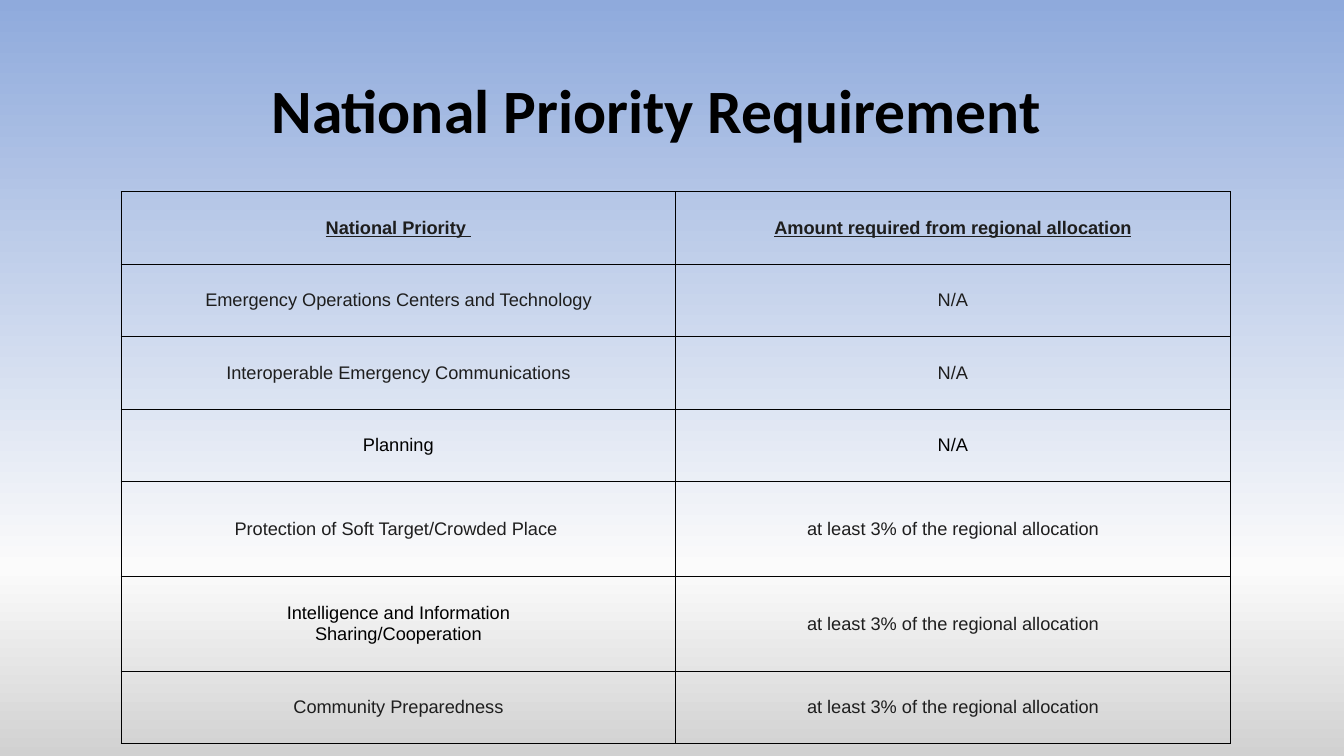
from copy import deepcopy

from lxml import etree
from pptx import Presentation
from pptx.dml.color import RGBColor
from pptx.enum import text
from pptx.oxml import ns
from pptx.util import Inches, Pt

TITLE = "National Priority Requirement"
BLACK, CHARCOAL = "000000", "1E1E1E"
SHARE = "at least 3% of the regional allocation"
BACKGROUND_STOPS = [(0, "8FAADC"), (0.75, "FBFBFB"), (1, "D1D1D1")]
SHORT_ROW, TALL_ROW = 0.72, 0.94
COLUMN_WIDTH = 5.5

# Row height, then (text, colour) for each column; \v is a line break
ROWS = [
    (SHORT_ROW, ("National Priority ", CHARCOAL),
     ("Amount required from regional allocation", CHARCOAL)),
    (SHORT_ROW, ("Emergency Operations Centers and Technology", CHARCOAL), ("N/A", CHARCOAL)),
    (SHORT_ROW, ("Interoperable Emergency Communications", CHARCOAL), ("N/A", CHARCOAL)),
    (SHORT_ROW, ("Planning", BLACK), ("N/A", BLACK)),
    (TALL_ROW, ("Protection of Soft Target/Crowded Place ", CHARCOAL), (SHARE, CHARCOAL)),
    (TALL_ROW, ("Intelligence and Information\vSharing/Cooperation", BLACK), (SHARE, CHARCOAL)),
    (SHORT_ROW, ("Community Preparedness", CHARCOAL), (SHARE, CHARCOAL)),
]


def color(hex_string):
    return RGBColor.from_string(hex_string)


def write(paragraph, words, font_name, size, hex_string, bold):
    paragraph.text = words
    paragraph.alignment = text.PP_ALIGN.CENTER
    font = paragraph.font
    font.name, font.size, font.bold = font_name, Pt(size), bold
    font.color.rgb = color(hex_string)


def paint_background(slide):
    fill = slide.background.fill
    fill.gradient()
    fill.gradient_angle = 270
    stop_list = slide.element.find(".//" + ns.qn("a:gsLst"))
    while len(stop_list) < len(BACKGROUND_STOPS):
        stop_list.append(deepcopy(stop_list[0]))
    for stop, (position, hex_string) in zip(fill.gradient_stops, BACKGROUND_STOPS):
        stop.position = position
        stop.color.rgb = color(hex_string)


def add_borders(cell):
    """Draw a thin black line on all four sides, ahead of the cell's fill."""
    properties = cell._tc.get_or_add_tcPr()
    for index, side in enumerate(("lnL", "lnR", "lnT", "lnB")):
        line = etree.Element(ns.qn(f"a:{side}"), w=str(Pt(0.5)))
        solid = etree.SubElement(line, ns.qn("a:solidFill"))
        etree.SubElement(solid, ns.qn("a:srgbClr"), val=BLACK)
        properties.insert(index, line)


def add_title(slide):
    box = slide.shapes.add_textbox(Inches(1.75), Inches(0.4), Inches(9.53), Inches(1.45))
    frame = box.text_frame
    frame.word_wrap = True
    frame.vertical_anchor = text.MSO_ANCHOR.MIDDLE
    paragraph = frame.paragraphs[0]
    write(paragraph, TITLE, "Calibri", 44, BLACK, True)
    paragraph.line_spacing = 0.9


def add_priority_table(slide):
    height = sum(row[0] for row in ROWS)
    table = slide.shapes.add_table(len(ROWS), 2, Inches(1.2), Inches(1.9),
                                   Inches(2 * COLUMN_WIDTH), Inches(height)).table
    table.first_row = table.horz_banding = False
    for row_index, (row_height, *entries) in enumerate(ROWS):
        table.rows[row_index].height = Inches(row_height)
        is_header = row_index == 0
        for column_index, (words, hex_string) in enumerate(entries):
            cell = table.cell(row_index, column_index)
            cell.fill.background()
            add_borders(cell)
            cell.vertical_anchor = text.MSO_ANCHOR.MIDDLE
            cell.margin_left = cell.margin_right = Inches(0.07)
            cell.margin_top = cell.margin_bottom = Inches(0.04)
            paragraph = cell.text_frame.paragraphs[0]
            write(paragraph, words, "Arial", 13, hex_string, is_header)
            paragraph.font.underline = is_header


def main():
    presentation = Presentation()
    presentation.slide_width = Inches(13.33)
    presentation.slide_height = Inches(7.5)
    slide = presentation.slides.add_slide(presentation.slide_layouts[6])
    paint_background(slide)
    add_title(slide)
    add_priority_table(slide)
    presentation.save("out.pptx")


if __name__ == "__main__":
    main()
